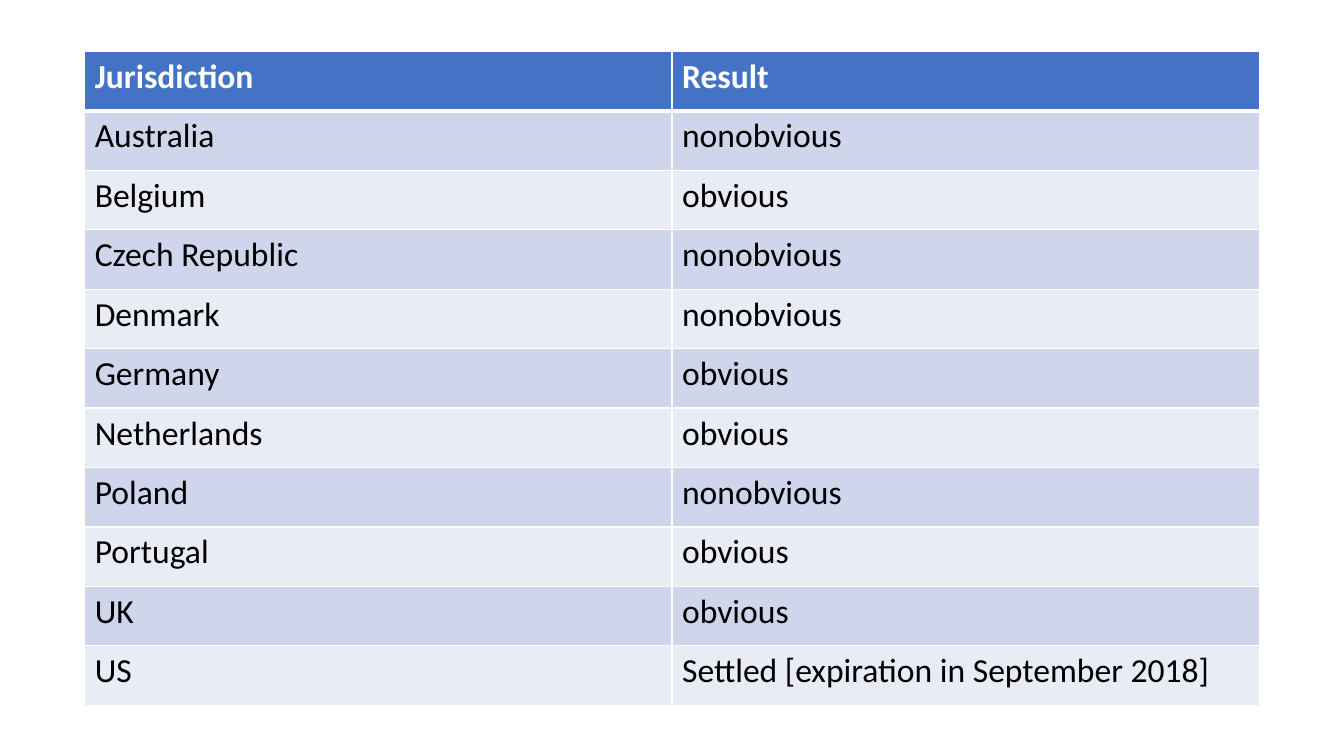
from dataclasses import dataclass

from lxml.etree import SubElement
from pptx import Presentation
from pptx.dml.color import RGBColor
from pptx.oxml.ns import qn
from pptx.slide import Slide
from pptx.table import _Cell
from pptx.util import Emu, Inches, Pt


@dataclass(frozen=True)
class Theme:
    font: str = "Calibri"
    text_size: int = 24
    header_fill: str = "4472C4"
    header_text: str = "FFFFFF"
    band_fills: tuple[str, str] = ("CFD5EA", "E9EBF5")
    body_text: str = "000000"
    border: str = "FFFFFF"
    thin_border: int = 1
    header_rule: int = 3


@dataclass(frozen=True)
class Ruling:
    jurisdiction: str
    result: str


@dataclass(frozen=True)
class Area:
    left: float
    top: float
    width: float
    height: float


@dataclass(frozen=True)
class RowStyle:
    fill: str
    text: str
    bold: bool
    top_border: int
    bottom_border: int


THEME = Theme()
SLIDE_WIDTH = Inches(13.33)
SLIDE_HEIGHT = Inches(7.5)
TABLE_AREA = Area(left=0.063, top=0.068, width=0.874, height=0.865)
RULINGS = [
    Ruling("Jurisdiction", "Result"),
    Ruling("Australia", "nonobvious"),
    Ruling("Belgium", "obvious"),
    Ruling("Czech Republic", "nonobvious"),
    Ruling("Denmark", "nonobvious"),
    Ruling("Germany", "obvious"),
    Ruling("Netherlands", "obvious"),
    Ruling("Poland", "nonobvious"),
    Ruling("Portugal", "obvious"),
    Ruling("UK", "obvious"),
    Ruling("US", "Settled [expiration in September 2018]"),
]


def row_style(row: int) -> RowStyle:
    if row == 0:
        return RowStyle(THEME.header_fill, THEME.header_text, True,
                        THEME.thin_border, THEME.header_rule)
    top_border = THEME.header_rule if row == 1 else THEME.thin_border
    return RowStyle(THEME.band_fills[(row - 1) % 2], THEME.body_text, False,
                    top_border, THEME.thin_border)


def draw_borders(cell: _Cell, style: RowStyle) -> None:
    properties = cell._tc.get_or_add_tcPr()
    widths = {
        "a:lnL": THEME.thin_border,
        "a:lnR": THEME.thin_border,
        "a:lnT": style.top_border,
        "a:lnB": style.bottom_border,
    }
    for edge, width in widths.items():
        line = SubElement(properties, qn(edge), w=str(Pt(width)))
        SubElement(SubElement(line, qn("a:solidFill")), qn("a:srgbClr"), val=THEME.border)


def draw_cell(cell: _Cell, wording: str, style: RowStyle) -> None:
    draw_borders(cell, style)
    cell.fill.solid()
    cell.fill.fore_color.rgb = RGBColor.from_string(style.fill)
    cell.text = wording
    font = cell.text_frame.paragraphs[0].runs[0].font
    text_format = {"name": THEME.font, "size": Pt(THEME.text_size), "bold": style.bold}
    for attribute, value in text_format.items():
        setattr(font, attribute, value)
    font.color.rgb = RGBColor.from_string(style.text)


def draw_rulings(slide: Slide, rulings: list[Ruling], area: Area) -> None:
    height = Emu(int(SLIDE_HEIGHT * area.height))
    rulings_table = slide.shapes.add_table(
        len(rulings), 2,
        Emu(int(SLIDE_WIDTH * area.left)), Emu(int(SLIDE_HEIGHT * area.top)),
        Emu(int(SLIDE_WIDTH * area.width)), height,
    ).table
    for row, ruling in enumerate(rulings):
        rulings_table.rows[row].height = Emu(height // len(rulings))
        for column, wording in enumerate((ruling.jurisdiction, ruling.result)):
            draw_cell(rulings_table.cell(row, column), wording, row_style(row))


def main() -> None:
    presentation = Presentation()
    presentation.slide_width = SLIDE_WIDTH
    presentation.slide_height = SLIDE_HEIGHT
    slide = presentation.slides.add_slide(presentation.slide_layouts[6])
    draw_rulings(slide, RULINGS, TABLE_AREA)
    presentation.save("out.pptx")


if __name__ == "__main__":
    main()
